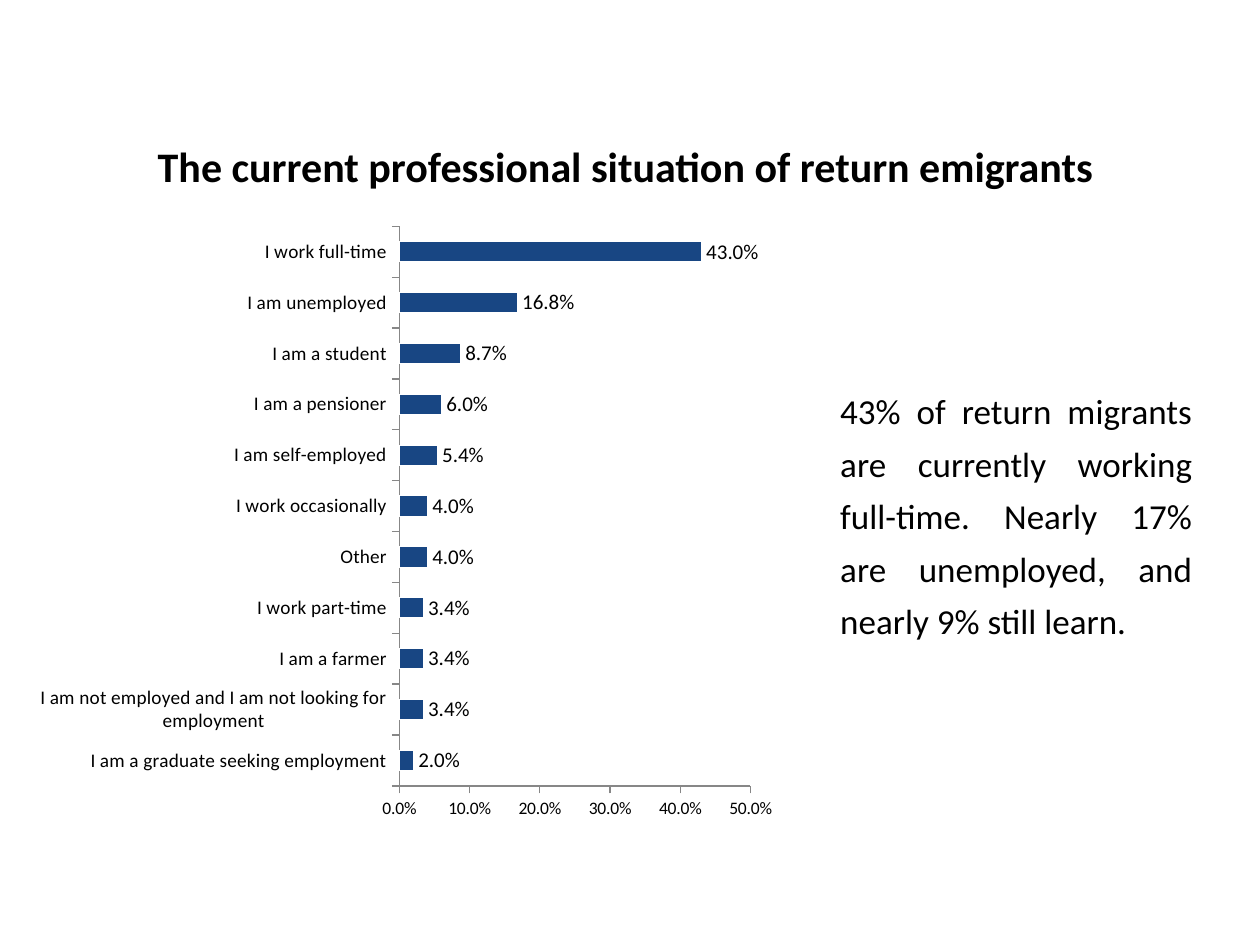
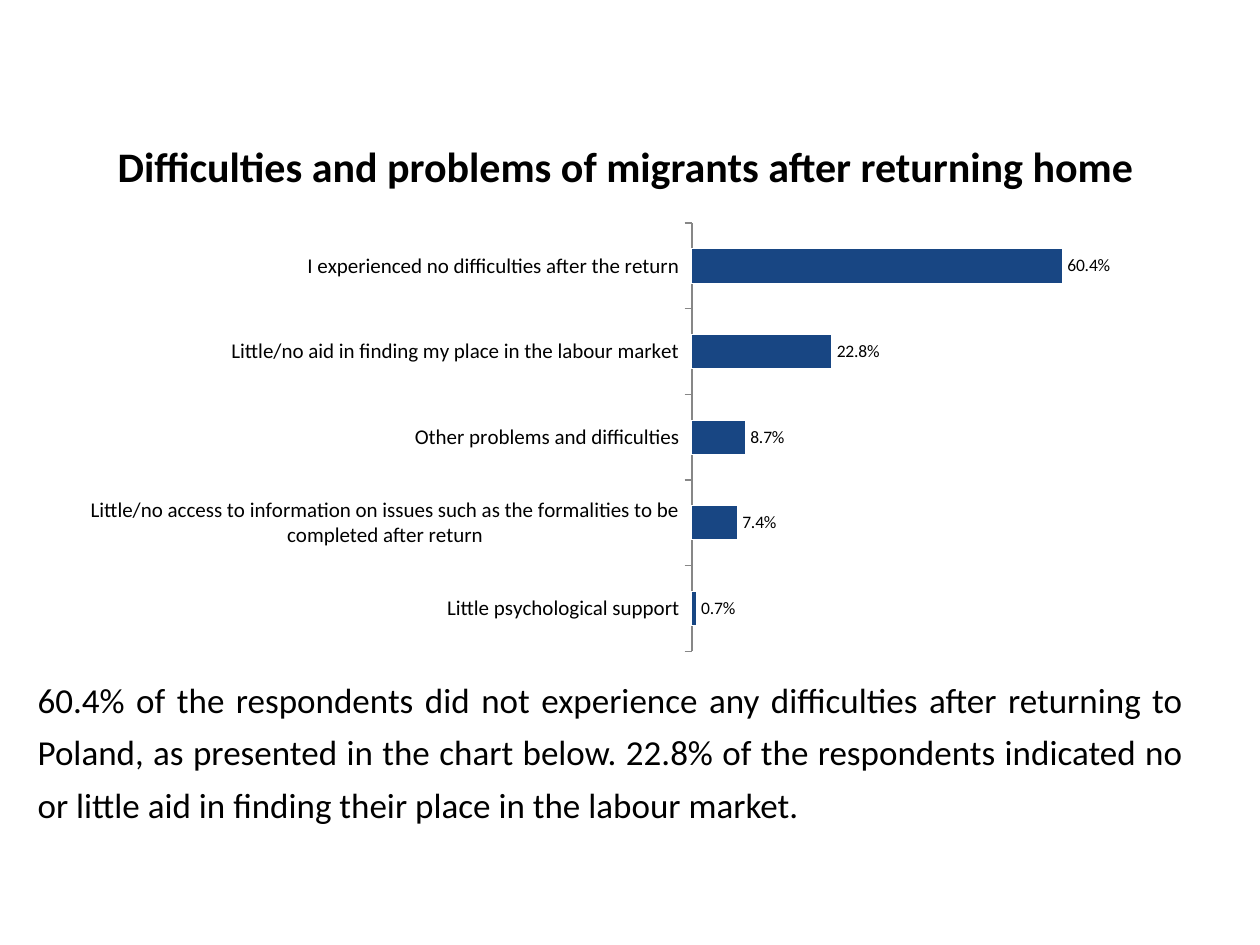
from lxml import etree
from pptx import Presentation
from pptx.chart.data import CategoryChartData
from pptx.dml.color import RGBColor
from pptx.enum.chart import XL_CHART_TYPE, XL_LABEL_POSITION, XL_TICK_MARK
from pptx.enum.text import PP_ALIGN
from pptx.oxml.ns import qn
from pptx.util import Inches, Pt

BAR_CLUSTERED = XL_CHART_TYPE.BAR_CLUSTERED
OUTSIDE_END = XL_LABEL_POSITION.OUTSIDE_END
TICK_OUTSIDE = XL_TICK_MARK.OUTSIDE
CENTER, JUSTIFY = PP_ALIGN.CENTER, PP_ALIGN.JUSTIFY

FONT = "Calibri"
BLACK, WHITE, BLUE, GREY = "000000", "FFFFFF", "184683", "878787"
PERCENT = "0.0%"
TITLE_AREA = (0.28, 1.07, 9.37, 0.5)

# Content: bars run from top to bottom; plot is a share of the chart area
SLIDES = [
    {
        "title": "The current professional situation of return emigrants",
        "body": "43% of return migrants are currently working full-time. "
                "Nearly 17% are unemployed, and nearly 9% still learn.",
        "body_area": (6.57, 2.96, 2.99, 2.17),
        "chart_area": (0.2, 1.7, 6.06, 4.88),
        "plot": (0.49, 0.02, 0.46, 0.91),
        "category_size": 11, "label_size": 12,
        "maximum": 0.5, "step": 0.1, "show_values_axis": True,
        "bars": [
            ("I work full-time", 0.43),
            ("I am unemployed", 0.168),
            ("I am a student", 0.087),
            ("I am a pensioner", 0.06),
            ("I am self-employed", 0.054),
            ("I work occasionally", 0.04),
            ("Other", 0.04),
            ("I work part-time", 0.034),
            ("I am a farmer", 0.034),
            ("I am not employed and I am not looking for employment", 0.034),
            ("I am a graduate seeking employment", 0.02),
        ],
    },
    {
        "title": "Difficulties and problems of migrants after returning home",
        "body": "60.4% of the respondents did not experience any difficulties "
                "after returning to Poland, as presented in the chart below. "
                "22.8% of the respondents indicated no or little aid in "
                "finding their place in the labour market.",
        "body_area": (0.2, 5.25, 9.29, 1.33),
        "chart_area": (0.51, 1.7, 9.06, 3.54),
        "plot": (0.55, 0.02, 0.43, 0.96),
        "category_size": 12, "label_size": 10,
        "maximum": 0.8, "step": 0.2, "show_values_axis": False,
        "bars": [
            ("I experienced no difficulties after the return", 0.604),
            ("Little/no aid in finding my place in the labour market", 0.228),
            ("Other problems and difficulties", 0.087),
            ("Little/no access to information on issues such as the "
             "formalities to be completed after return", 0.074),
            ("Little psychological support", 0.007),
        ],
    },
]


def color(value):
    return RGBColor.from_string(value)


def style_font(font, size, bold=False):
    font.name, font.size, font.bold = FONT, Pt(size), bold
    font.color.rgb = color(BLACK)


def add_text(page, text, area, size, align, bold=False, line_spacing=None):
    box = page.shapes.add_textbox(*map(Inches, area))
    box.text_frame.word_wrap = True
    para = box.text_frame.paragraphs[0]
    para.alignment = align
    if line_spacing:
        para.line_spacing = Pt(line_spacing)
    span = para.add_run()
    span.text = text
    style_font(span.font, size, bold)


def place_plot(chart, plot):
    """Fix the inner plot area as shares of the chart area."""
    plot_area = chart.plots[0]._element.getparent()
    for old_layout in plot_area.findall(qn("c:layout")):
        plot_area.remove(old_layout)
    layout = etree.Element(qn("c:layout"))
    manual = etree.SubElement(layout, qn("c:manualLayout"))
    settings = [("layoutTarget", "inner"), ("xMode", "edge"), ("yMode", "edge")]
    settings += zip("xywh", map(str, plot))
    for tag, value in settings:
        etree.SubElement(manual, qn("c:" + tag)).set("val", value)
    plot_area.insert(0, layout)


def add_bar_chart(page, content):
    # Bar charts are drawn from the bottom up
    names, values = zip(*reversed(content["bars"]))
    data = CategoryChartData(number_format=PERCENT)
    data.categories = names
    data.add_series("Series 1", values)
    area = map(Inches, content["chart_area"])
    chart = page.shapes.add_chart(BAR_CLUSTERED, *area, data).chart
    chart.has_legend = False
    chart.has_title = False
    style_font(chart.font, 10)
    place_plot(chart, content["plot"])

    # Bars and their values
    bars = chart.plots[0]
    bars.gap_width = 150
    bars.vary_by_categories = False
    series_format = bars.series[0].format
    series_format.fill.solid()
    series_format.fill.fore_color.rgb = color(BLUE)
    series_format.line.color.rgb = color(WHITE)
    bars.has_data_labels = True
    labels = bars.data_labels
    labels.show_value = True
    labels.position = OUTSIDE_END
    labels.number_format = PERCENT
    labels.number_format_is_linked = False
    style_font(labels.font, content["label_size"])

    # Axes
    for axis, size in ((chart.category_axis, content["category_size"]),
                       (chart.value_axis, 10)):
        axis.has_major_gridlines = False
        axis.major_tick_mark = TICK_OUTSIDE
        axis.format.line.color.rgb = color(GREY)
        style_font(axis.tick_labels.font, size)
    scale = chart.value_axis
    scale.minimum_scale, scale.maximum_scale = 0, content["maximum"]
    scale.major_unit = content["step"]
    scale.tick_labels.number_format = PERCENT
    scale.tick_labels.number_format_is_linked = False
    scale.visible = content["show_values_axis"]


def main():
    deck = Presentation()
    deck.slide_width, deck.slide_height = Inches(10), Inches(7.5)
    for content in SLIDES:
        page = deck.slides.add_slide(deck.slide_layouts[6])
        add_text(page, content["title"], TITLE_AREA, 24, CENTER, bold=True)
        add_text(page, content["body"], content["body_area"], 20, JUSTIFY,
                 line_spacing=30)
        add_bar_chart(page, content)
    deck.save("out.pptx")


if __name__ == "__main__":
    main()
